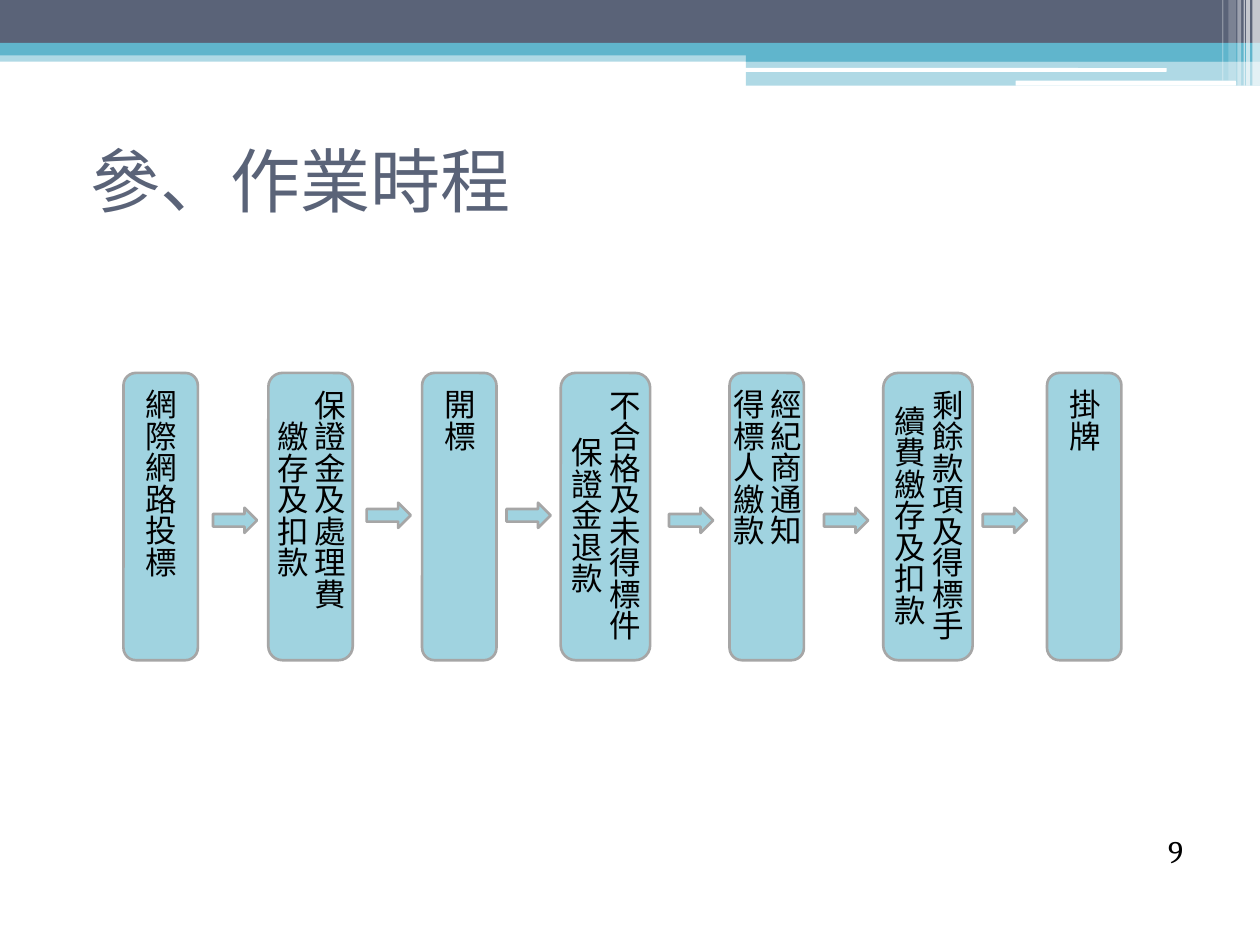
from pptx import Presentation
from pptx import util as u
from pptx.dml.color import RGBColor
from pptx.enum import shapes, text
from pptx.oxml import ns
from lxml import etree

COLORS = {"slate": "5A6378", "teal": "60B5CC", "white": "FFFFFF",
          "step": "A0D3E0", "edge": "A6A6A6", "ink": "000000"}
BODY_FONT = "Times New Roman"
RECT, ROUND, ARROW = (shapes.MSO_SHAPE.RECTANGLE, shapes.MSO_SHAPE.ROUNDED_RECTANGLE,
                      shapes.MSO_SHAPE.RIGHT_ARROW)

# Content
TITLE = "參、作業時程"
PAGE = "9"
# Process steps: left, width, paragraphs
STEPS = [
    (0.98, 0.59, ["網際網路投標"]),
    (2.13, 0.67, ["保證金及處理費", "繳存及扣款"]),
    (3.35, 0.59, ["開標"]),
    (4.45, 0.71, ["不合格及未得標件保證金退款"]),
    (5.79, 0.59, ["經紀商通知", "得標人繳款"]),
    (7.01, 0.71, ["剩餘款項及得標手續費繳存及扣款"]),
    (8.31, 0.59, ["掛牌"]),
]
STEP_TOP, STEP_HEIGHT = 2.96, 2.28
# Arrows between the steps: left, top
ARROWS = [(1.69, 4.03), (2.91, 3.99), (4.02, 3.99),
          (5.31, 4.03), (6.54, 4.03), (7.8, 4.03)]
ARROW_SIZE = (0.35, 0.2)

# Header bands: kind, left, top, width, height, colour, opacity in percent
BANDS = [
    (RECT, 0, 0.4, 10, 0.09, "teal", 50),
    (RECT, 0, 0, 10, 0.34, "slate", 100),
    (RECT, 0, 0.34, 10, 0.1, "teal", 100),
    (RECT, 5.92, 0.39, 4.08, 0.1, "teal", 100),
    (RECT, 5.92, 0.48, 4.08, 0.2, "teal", 50),
    (ROUND, 5.91, 0.54, 3.35, 0.03, "white", 100),
    (ROUND, 8.06, 0.64, 1.75, 0.04, "white", 100),
]
# Light stripes in the corner: left, width, height, opacity in percent
STRIPES = [(9.94, 0.06, 0.68, 65), (9.89, 0.03, 0.68, 65), (9.87, 0.01, 0.68, 60),
           (9.82, 0.03, 0.68, 40), (9.75, 0.06, 0.64, 20), (9.7, 0.01, 0.64, 30)]


def rgb(name):
    return RGBColor.from_string(COLORS[name])


def place(shape, *box):
    shape.left, shape.top, shape.width, shape.height = map(u.Inches, box)


def add_block(slide, kind, box, color, opacity=100, edge=None):
    block = slide.shapes.add_shape(kind, *map(u.Inches, box))
    block.shadow.inherit = False
    block.fill.solid()
    block.fill.fore_color.rgb = rgb(color)
    if opacity < 100:
        tint = block.fill._xPr.find(".//" + ns.qn("a:srgbClr"))
        etree.SubElement(tint, ns.qn("a:alpha"), val=str(opacity * 1000))
    if edge:
        block.line.color.rgb = rgb(edge)
        block.line.width = u.Pt(1.5)
    else:
        block.line.fill.background()
    return block


def write(frame, lines, size, color, font, align):
    frame.text = "\n".join(lines)
    for paragraph in frame.paragraphs:
        paragraph.alignment = align
        for run in paragraph.runs:
            run.font.size = u.Pt(size)
            run.font.name = font
            run.font.color.rgb = rgb(color)


def main():
    prs = Presentation()
    prs.slide_width, prs.slide_height = u.Inches(10), u.Inches(7.5)
    slide = prs.slides.add_slide(prs.slide_layouts[5])

    # Header decoration
    for kind, *box, color, opacity in BANDS:
        add_block(slide, kind, box, color, opacity)
    for left, width, height, opacity in STRIPES:
        add_block(slide, RECT, (left, 0, width, height), "white", opacity)

    # Title
    title = slide.shapes.title
    place(title, 0.5, 0.84, 9, 1.17)
    write(title.text_frame, [TITLE], 40, "slate", BODY_FONT, text.PP_ALIGN.LEFT)
    title.text_frame.vertical_anchor = text.MSO_ANCHOR.MIDDLE
    indent = title.text_frame.paragraphs[0]._p.get_or_add_pPr()
    indent.set("marL", str(u.Inches(0.68)))
    indent.set("indent", str(u.Inches(-0.56)))

    # Process steps with vertical text
    for left, width, lines in STEPS:
        step = add_block(slide, ROUND, (left, STEP_TOP, width, STEP_HEIGHT),
                         "step", edge="edge")
        frame = step.text_frame
        write(frame, lines, 18, "ink", BODY_FONT, text.PP_ALIGN.CENTER)
        frame.word_wrap = True
        frame.vertical_anchor = text.MSO_ANCHOR.MIDDLE
        frame._txBody.bodyPr.set("vert", "eaVert")

    # Arrows
    for left, top in ARROWS:
        add_block(slide, ARROW, (left, top, *ARROW_SIZE), "step", edge="edge")

    # Page number
    page = slide.shapes.add_textbox(*map(u.Inches, (8.66, 6.55, 0.83, 0.4)))
    write(page.text_frame, [PAGE], 18, "ink", "Cambria", text.PP_ALIGN.RIGHT)
    page.text_frame.word_wrap = True
    page.text_frame.vertical_anchor = text.MSO_ANCHOR.BOTTOM

    prs.save("out.pptx")


if __name__ == "__main__":
    main()
